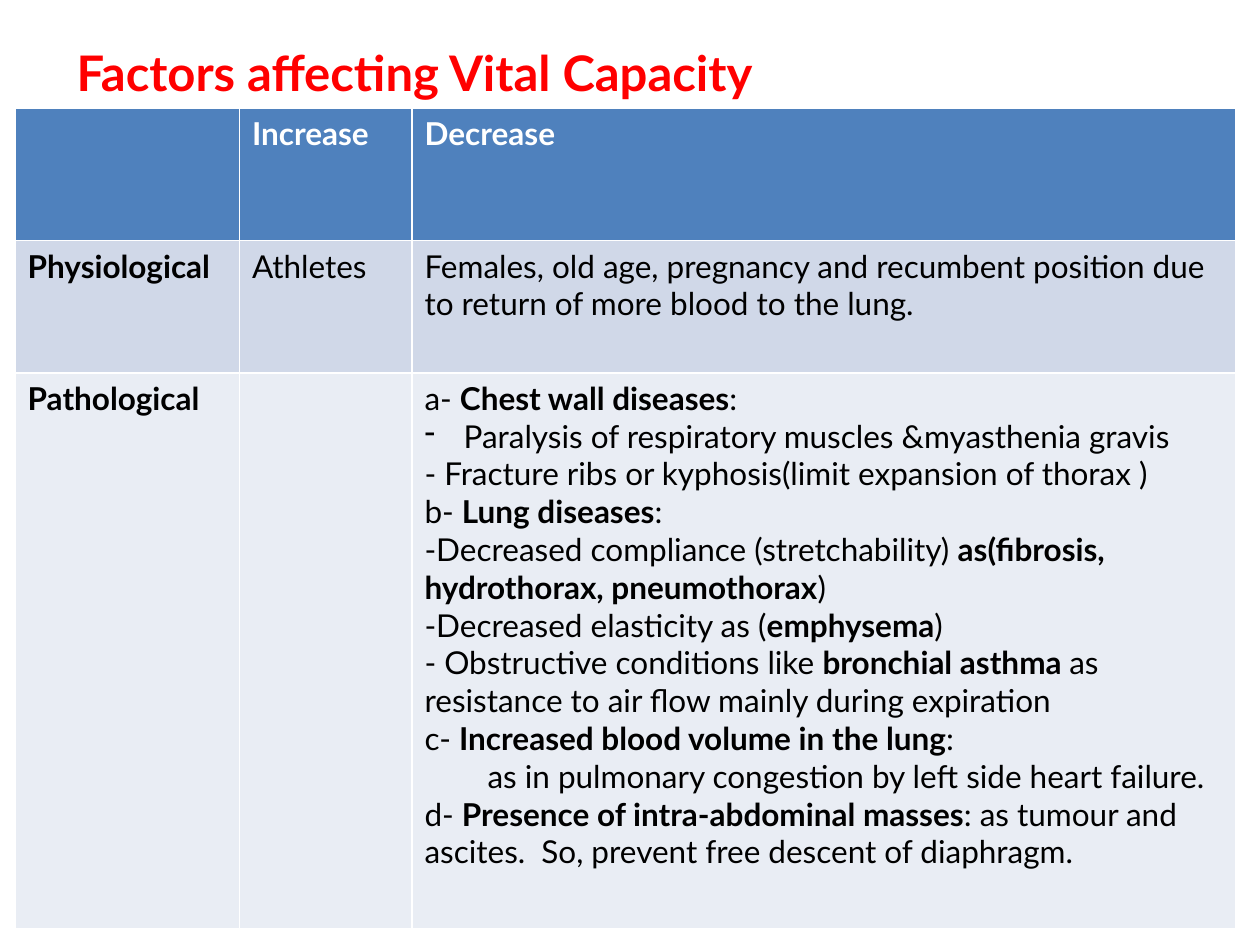
import pptx
import pptx.dml.color
import pptx.util
from lxml import etree
from pptx.oxml.ns import qn
from pptx.util import Inches

RED = pptx.dml.color.RGBColor(0xFF, 0x00, 0x00)
WHITE = pptx.dml.color.RGBColor(0xFF, 0xFF, 0xFF)
BLACK = pptx.dml.color.RGBColor(0x00, 0x00, 0x00)
HEADER_BLUE = pptx.dml.color.RGBColor(0x4F, 0x81, 0xBD)
BAND_DARK = pptx.dml.color.RGBColor(0xD0, 0xD8, 0xE8)
BAND_LIGHT = pptx.dml.color.RGBColor(0xE9, 0xED, 0xF4)
FONT = "Lato"

# Each cell is a list of paragraphs; ** switches bold on and off
PATHOLOGICAL_DECREASE = [
    "a- **Chest wall diseases**:",
    "Paralysis of respiratory muscles &myasthenia gravis",
    "- Fracture ribs or kyphosis(limit expansion of thorax )",
    "b- **Lung diseases**:",
    "-Decreased compliance (stretchability) **as(fibrosis, hydrothorax, pneumothorax**)",
    "-Decreased elasticity as (**emphysema**)",
    "- Obstructive conditions like **bronchial asthma **as resistance to air flow "
    "mainly during expiration",
    "c- **Increased blood volume in the lung**:",
    "as in pulmonary congestion by left side heart failure.",
    "d- **Presence of intra-abdominal masses**: as tumour and ascites.  "
    "So, prevent free descent of diaphragm.",
]
ROWS = [
    [[], ["**Increase**"], ["**Decrease**"]],
    [
        ["**Physiological**"],
        ["Athletes"],
        ["Females, old age, pregnancy and recumbent position due to return of "
         "more blood to the lung."],
    ],
    [["**Pathological**"], [], PATHOLOGICAL_DECREASE],
]
ROW_FILLS = [HEADER_BLUE, BAND_DARK, BAND_LIGHT]
ROW_COLORS = [WHITE, BLACK, BLACK]
COLUMN_WIDTHS = [1.78, 1.37, 6.54]
ROW_HEIGHTS = [1.05, 1.05, 4.41]


def style_font(font, size, color):
    font.name = FONT
    font.size = pptx.util.Pt(size)
    font.color.rgb = color


def fill_cell(cell, lines, color):
    frame = cell.text_frame
    for index, line in enumerate(lines):
        para = frame.add_paragraph() if index else frame.paragraphs[0]
        for position, text in enumerate(line.split("**")):
            if text:
                span = para.add_run()
                span.text = text
                span.font.bold = position % 2 == 1
        style_font(para.font, 18, color)


deck = pptx.Presentation()
deck.slide_width = Inches(10)
deck.slide_height = Inches(7.5)
slide = deck.slides.add_slide(deck.slide_layouts[6])

# Table of factors
table = slide.shapes.add_table(
    len(ROWS), len(COLUMN_WIDTHS), Inches(0.12), Inches(0.86),
    Inches(sum(COLUMN_WIDTHS)), Inches(sum(ROW_HEIGHTS)),
).table
for column, width in zip(table.columns, COLUMN_WIDTHS):
    column.width = Inches(width)
for row, height, texts, fill, color in zip(
    table.rows, ROW_HEIGHTS, ROWS, ROW_FILLS, ROW_COLORS
):
    row.height = Inches(height)
    for cell, lines in zip(row.cells, texts):
        cell.fill.solid()
        cell.fill.fore_color.rgb = fill
        fill_cell(cell, lines, color)

# Dash bullet and indented line in the pathological cell
paragraphs = table.cell(2, 2).text_frame.paragraphs
bullet_properties = paragraphs[1]._p.get_or_add_pPr()
bullet_properties.set("marL", str(Inches(0.31)))
bullet_properties.set("indent", str(-Inches(0.31)))
bullet = etree.Element(qn("a:buChar"), char="-")
bullet_properties.insert(0, bullet)
paragraphs[8].level = 1
paragraphs[8]._p.get_or_add_pPr().set("marL", str(Inches(0.5)))

# Title
box = slide.shapes.add_textbox(Inches(0.51), Inches(0.29), Inches(8.82), Inches(0.57))
box.text_frame.word_wrap = True
title = box.text_frame.paragraphs[0]
title.text = "Factors affecting Vital Capacity"
style_font(title.font, 28, RED)
title.font.bold = True

deck.save("out.pptx")
